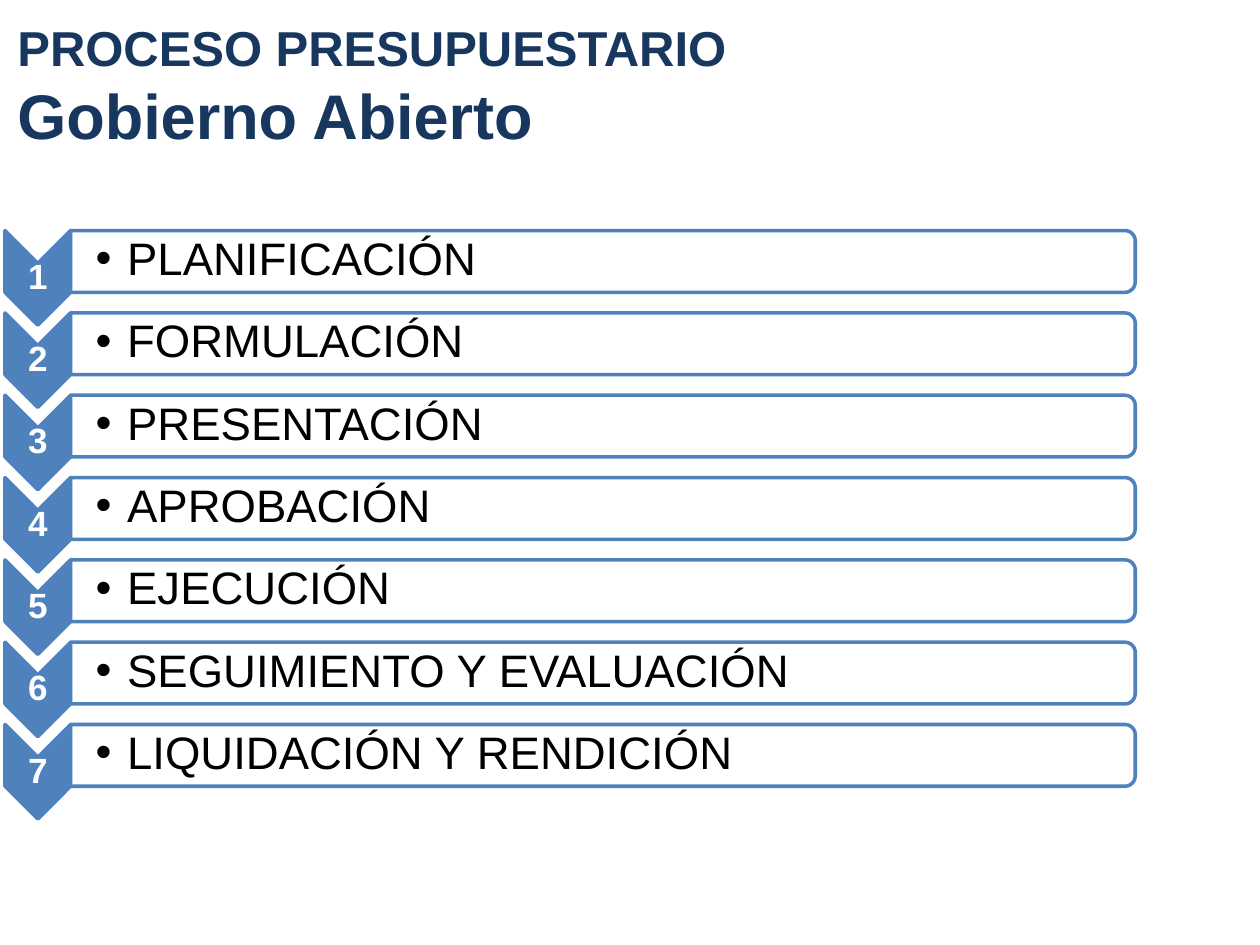
from dataclasses import dataclass

from lxml.etree import SubElement
from pptx import Presentation
from pptx.dml.color import RGBColor
from pptx.enum.shapes import MSO_SHAPE
from pptx.enum.text import MSO_ANCHOR, PP_ALIGN
from pptx.oxml.ns import qn
from pptx.util import Inches, Pt


@dataclass(frozen=True)
class Theme:
    font: str = "Arial"
    navy: str = "17375E"
    blue: str = "4F81BD"
    white: str = "FFFFFF"
    black: str = "000000"
    heading_size: int = 28
    subheading_size: int = 36
    number_size: int = 20
    stage_size: int = 26
    outline: int = 2


THEME = Theme()
STAGES = [
    "PLANIFICACIÓN",
    "FORMULACIÓN",
    "PRESENTACIÓN",
    "APROBACIÓN",
    "EJECUCIÓN",
    "SEGUIMIENTO Y EVALUACIÓN",
    "LIQUIDACIÓN Y RENDICIÓN",
]

# Grid in inches: a narrow number column, a wide stage column, equal rows.
NUMBER_LEFT, NUMBER_WIDTH = 0.04, 0.52
STAGE_LEFT, STAGE_WIDTH = 0.56, 8.45
FIRST_ROW, LAST_ROW = 1.83, 5.75
ROW_PITCH = (LAST_ROW - FIRST_ROW) / (len(STAGES) - 1)
CHEVRON_HEIGHT, BAR_HEIGHT = 0.75, 0.49


def style_span(span, size, color, bold=False):
    span.font.name = THEME.font
    span.font.size = Pt(size)
    span.font.bold = bold
    span.font.color.rgb = RGBColor.from_string(color)


def add_text(page, left, top, width, height, text, margins=None):
    """Add a wrapping, vertically centred box and return its paragraph."""
    box = page.shapes.add_textbox(*map(Inches, (left, top, width, height)))
    frame = box.text_frame
    frame.word_wrap = True
    frame.vertical_anchor = MSO_ANCHOR.MIDDLE
    if margins:
        (frame.margin_left, frame.margin_top,
         frame.margin_right, frame.margin_bottom) = map(Inches, margins)
    para = frame.paragraphs[0]
    para.text = text
    return para


def add_turned_shape(page, kind, left, top, width, height, fill):
    """Add a shape turned by 90 degrees that covers the given area."""
    shape = page.shapes.add_shape(
        kind,
        Inches(left + (width - height) / 2),
        Inches(top + (height - width) / 2),
        Inches(height),
        Inches(width),
    )
    shape.rotation = 90
    shape.shadow.inherit = False
    shape.fill.solid()
    shape.fill.fore_color.rgb = RGBColor.from_string(fill)
    shape.line.color.rgb = RGBColor.from_string(THEME.blue)
    shape.line.width = Pt(THEME.outline)
    return shape


def set_opacity(shape, percent):
    color = shape._element.spPr.find(qn("a:solidFill")).find(qn("a:srgbClr"))
    SubElement(color, qn("a:alpha"), val=str(percent * 1000))


def add_bullet(para, indent):
    properties = para._p.get_or_add_pPr()
    properties.set("marL", str(Inches(indent)))
    properties.set("indent", str(-Inches(indent)))
    SubElement(properties, qn("a:buFont"), typeface=THEME.font)
    SubElement(properties, qn("a:buChar"), char="•")


def add_title(page):
    para = add_text(page, 0.04, 0.05, 6.61, 1.25,
                    "PROCESO PRESUPUESTARIO\vGobierno Abierto")
    for span, size in zip(para.runs, (THEME.heading_size, THEME.subheading_size)):
        style_span(span, size, THEME.navy, bold=True)


def add_number(page, top, number):
    add_turned_shape(page, MSO_SHAPE.CHEVRON, NUMBER_LEFT, top,
                     NUMBER_WIDTH, CHEVRON_HEIGHT, THEME.blue)
    notch = NUMBER_WIDTH / 2
    para = add_text(page, NUMBER_LEFT, top + notch, NUMBER_WIDTH,
                    CHEVRON_HEIGHT - 2 * notch, str(number), (0.01,) * 4)
    para.alignment = PP_ALIGN.CENTER
    para.line_spacing = 0.9
    style_span(para.runs[0], THEME.number_size, THEME.white, bold=True)


def add_stage(page, top, name):
    bar = add_turned_shape(page, MSO_SHAPE.ROUND_2_SAME_RECTANGLE, STAGE_LEFT, top,
                           STAGE_WIDTH, BAR_HEIGHT, THEME.white)
    set_opacity(bar, 90)
    para = add_text(page, STAGE_LEFT, top + 0.02, STAGE_WIDTH - 0.02,
                    BAR_HEIGHT - 0.05, name, (0.2, 0.02, 0.02, 0.02))
    para.level = 1
    para.line_spacing = 0.9
    add_bullet(para, 0.25)
    style_span(para.runs[0], THEME.stage_size, THEME.black)


def main():
    deck = Presentation()
    deck.slide_width, deck.slide_height = Inches(10), Inches(7.5)
    page = deck.slides.add_slide(deck.slide_layouts[6])
    add_title(page)
    for row, name in enumerate(STAGES):
        top = FIRST_ROW + row * ROW_PITCH
        add_number(page, top, row + 1)
        add_stage(page, top, name)
    deck.save("out.pptx")


if __name__ == "__main__":
    main()
